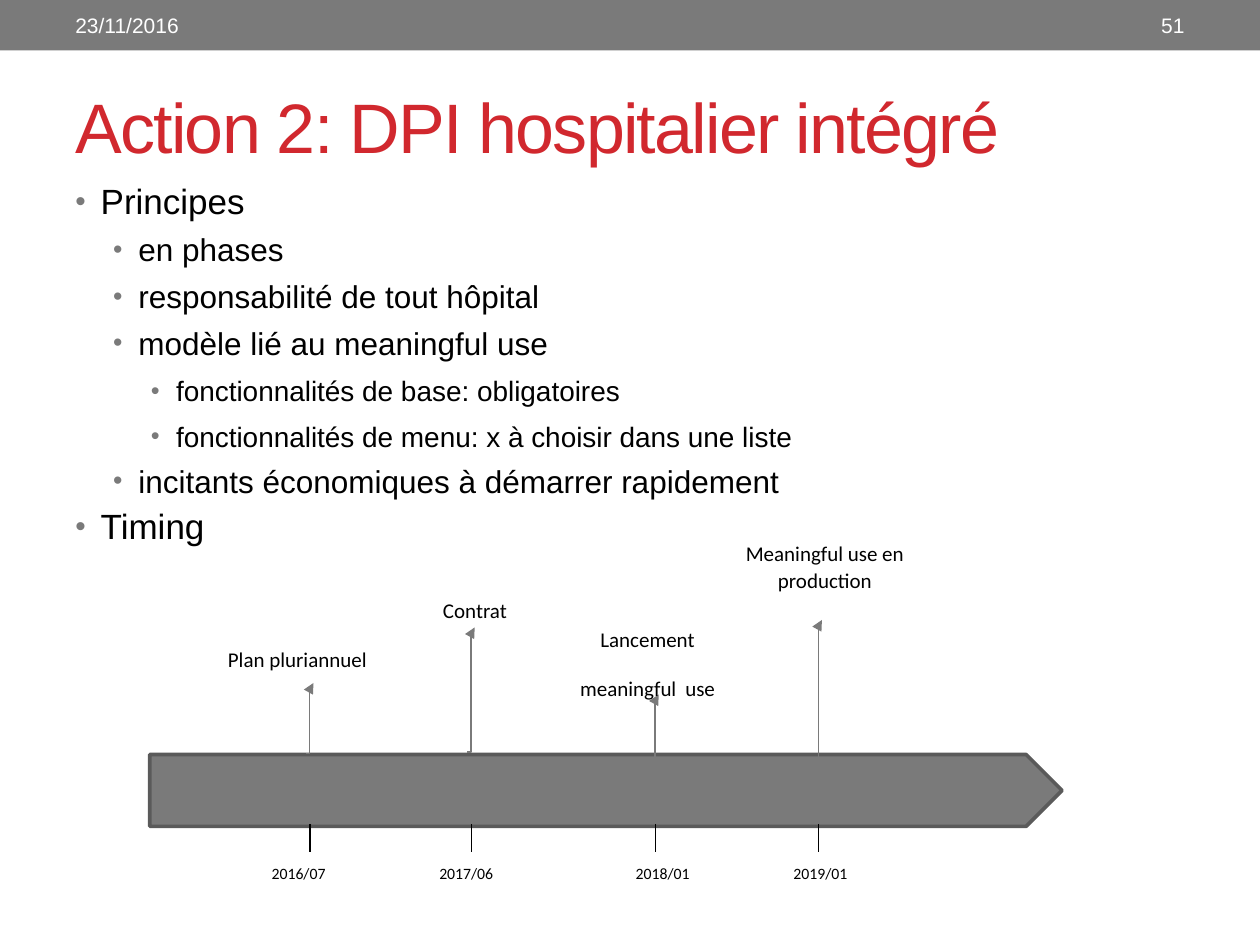
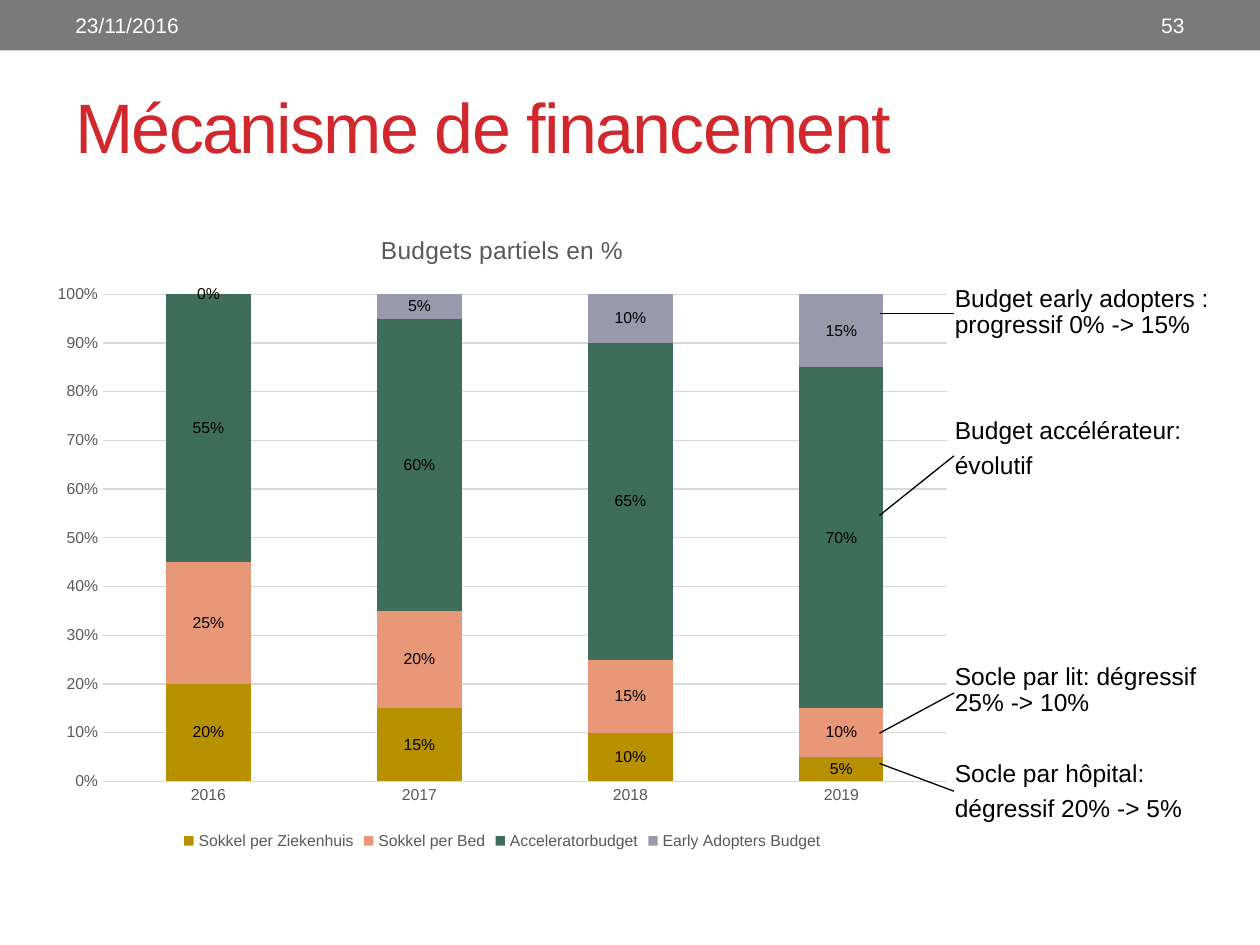
from dataclasses import dataclass

from lxml.etree import SubElement
from pptx import Presentation
from pptx.chart.data import CategoryChartData
from pptx.dml.color import RGBColor
from pptx.enum.chart import XL_CHART_TYPE, XL_LEGEND_POSITION, XL_TICK_MARK
from pptx.enum.shapes import MSO_CONNECTOR, MSO_SHAPE
from pptx.enum.text import MSO_ANCHOR, PP_ALIGN
from pptx.oxml.ns import qn
from pptx.util import Cm, Pt


@dataclass(frozen=True)
class Theme:
    font: str = "Arial"
    label_font: str = "Calibri"
    red: str = "D1282E"
    grey: str = "7A7A7A"
    dark_grey: str = "5A5A5A"
    chart_text: str = "595959"
    grid: str = "D9D9D9"
    black: str = "000000"
    white: str = "FFFFFF"
    title: int = 40
    header: int = 12
    body: tuple = (20, 18, 16)
    callout: int = 14
    label: int = 12
    small: int = 9
    thin: float = 0.75
    thick: float = 2.08


T = Theme()

PRINCIPLES = [
    (0, "Principes"),
    (1, "en phases"),
    (1, "responsabilité de tout hôpital"),
    (1, "modèle lié au meaningful use"),
    (2, "fonctionnalités de base: obligatoires"),
    (2, "fonctionnalités de menu: x à choisir dans une liste"),
    (1, "incitants économiques à démarrer rapidement"),
    (0, "Timing"),
]

LAUNCH = ["Lancement", [("meaningful", {}), (" ", {"size": 18, "font": T.font}), ("use", {})]]

# x, arrow foot, arrow head, date centre, date, label box, label lines, label wraps
MILESTONES = [
    (6.25, 15.19, 13.77, 6.02, "2016/07", (4.09, 12.9, 3.81, 0.89), ["Plan pluriannuel"], False),
    (9.5, 15.16, 12.65, 9.4, "2017/06", (7.39, 11.91, 4.37, 1.52), ["Contrat"], True),
    (13.21, 15.29, 14, 13.36, "2018/01", (10.87, 12.5, 4.37, 1.78), LAUNCH, True),
    (16.5, 15.39, 12.5, 16.54, "2019/01", (14.33, 10.77, 4.6, 1.5),
     ["Meaningful use en production"], True),
]

YEARS = ["2016", "2017", "2018", "2019"]
BUDGETS = [
    ("Sokkel per Ziekenhuis", "B89101", (0.2, 0.15, 0.1, 0.05)),
    ("Sokkel per Bed", "E89878", (0.25, 0.2, 0.15, 0.1)),
    ("Acceleratorbudget", "3E6E5A", (0.55, 0.6, 0.65, 0.7)),
    ("Early Adopters Budget", "989AAC", (0, 0.05, 0.1, 0.15)),
]

CALLOUTS = [
    (5.77, ["Budget early adopters : progressif 0% -> 15%"], 6.32, 6.32),
    (8.43, ["Budget accélérateur:", "évolutif"], 10.39, 9.19),
    (13.39, ["Socle par lit: dégressif 25% -> 10%"], 14.78, 13.97),
    (15.35, ["Socle par hôpital:", "dégressif 20% -> 5%"], 15.39, 15.95),
]


def rgb(color):
    return RGBColor.from_string(color)


def set_font(f, size, color, font=T.font):
    f.size, f.name, f.bold = Pt(size), font, False
    f.color.rgb = rgb(color)


def add_run(p, text, *, size, color, font, tracking):
    r = p.add_run()
    r.text = text
    set_font(r.font, size, color, font)
    if tracking:
        r.font._element.set("spc", str(tracking))


def add_text(s, box, lines, *, size, color=T.black, font=T.font, tracking=0,
             align=PP_ALIGN.LEFT, anchor=MSO_ANCHOR.TOP, spacing=None, after=None,
             inset=(0.25, 0.13), wrap=True):
    tf = s.shapes.add_textbox(*map(Cm, box)).text_frame
    tf.word_wrap, tf.vertical_anchor = wrap, anchor
    tf.margin_left = tf.margin_right = Cm(inset[0])
    tf.margin_top = tf.margin_bottom = Cm(inset[1])
    for i, line in enumerate(lines):
        p = tf.add_paragraph() if i else tf.paragraphs[0]
        p.alignment, p.line_spacing = align, spacing
        if after is not None:
            p.space_after = Pt(after)
        for text, changes in [(line, {})] if isinstance(line, str) else line:
            look = {"size": size, "color": color, "font": font, "tracking": tracking}
            add_run(p, text, **(look | changes))
    return tf


def add_bullets(s, box, items):
    lines = [[(text, {"size": T.body[level]})] for level, text in items]
    tf = add_text(s, box, lines, size=T.body[0], spacing=Pt(23))
    for p, (level, _) in zip(tf.paragraphs, items):
        p.level = level
        p.space_before = Pt(T.body[level] * 0.2)
        pPr = p._p.get_or_add_pPr()
        pPr.set("marL", str(Cm(0.51 + 0.76 * level)))
        pPr.set("indent", str(-Cm(0.51)))
        SubElement(SubElement(pPr, qn("a:buClr")), qn("a:srgbClr")).set("val", T.grey)
        SubElement(pPr, qn("a:buSzPct")).set("val", "90000" if level == 2 else "85000")
        SubElement(pPr, qn("a:buFont")).set("typeface", T.font)
        SubElement(pPr, qn("a:buChar")).set("char", "•")


def add_block(s, kind, box, fill, line=None):
    sp = s.shapes.add_shape(kind, *map(Cm, box))
    sp.shadow.inherit = False
    sp.fill.solid()
    sp.fill.fore_color.rgb = rgb(fill)
    if line:
        sp.line.color.rgb = rgb(line)
        sp.line.width = Pt(T.thick)
    else:
        sp.line.fill.background()


def add_line(s, start, end, color=T.black, kind=MSO_CONNECTOR.STRAIGHT, arrow=False):
    cxn = s.shapes.add_connector(kind, *map(Cm, start + end))
    cxn.line.color.rgb = rgb(color)
    cxn.line.width = Pt(T.thin)
    if arrow:
        SubElement(cxn.line._get_or_add_ln(), qn("a:tailEnd")).set("type", "triangle")
    SubElement(cxn._element.spPr, qn("a:effectLst"))


def add_base(prs, title, number):
    s = prs.slides.add_slide(prs.slide_layouts[6])
    add_block(s, MSO_SHAPE.RECTANGLE, (0, 0, 25.4, 1.02), T.grey)
    add_text(s, (1.27, 1.17, 22.86, 2.74), [title], size=T.title, color=T.red,
             tracking=-100, anchor=MSO_ANCHOR.MIDDLE)
    header = {"size": T.header, "color": T.white, "anchor": MSO_ANCHOR.MIDDLE}
    add_text(s, (1.27, 0.05, 8.05, 0.91), ["23/11/2016"], **header)
    add_text(s, (21.16, 0.05, 2.97, 0.91), [number], align=PP_ALIGN.RIGHT, **header)
    return s


def add_timeline(s):
    add_block(s, MSO_SHAPE.PENTAGON, (3.02, 15.21, 18.39, 1.45), T.grey, T.dark_grey)
    style = {"font": T.label_font, "align": PP_ALIGN.CENTER, "spacing": 1.07,
             "after": 6, "inset": (0.18, 0.1)}
    for x, foot, head, centre, date, box, lines, wrap in MILESTONES:
        add_line(s, (x - 0.08, foot), (x + 0.07, head), T.grey, MSO_CONNECTOR.ELBOW, True)
        add_line(s, (x, 16.61), (x, 17.17))
        add_text(s, (centre - 1.12, 17.28, 2.24, 0.89), [date], size=T.small, wrap=False, **style)
        add_text(s, box, lines, size=T.label, wrap=wrap, **style)


def style_axis(axis):
    axis.major_tick_mark = axis.minor_tick_mark = XL_TICK_MARK.NONE
    set_font(axis.tick_labels.font, T.small, T.chart_text)


def add_budget_chart(s, box):
    data = CategoryChartData(number_format="0%")
    data.categories = YEARS
    for name, _, values in BUDGETS:
        data.add_series(name, values)
    chart = s.shapes.add_chart(XL_CHART_TYPE.COLUMN_STACKED, *map(Cm, box), data).chart
    set_font(chart.font, 10, T.black)

    chart.has_title = True
    p = chart.chart_title.text_frame.paragraphs[0]
    add_run(p, "Budgets partiels en %", size=T.callout, color=T.chart_text,
            font=T.font, tracking=0)
    p.runs[0].font.bold = False

    chart.has_legend = True
    chart.legend.position = XL_LEGEND_POSITION.BOTTOM
    chart.legend.include_in_layout = False
    set_font(chart.legend.font, T.small, T.chart_text)

    years, shares = chart.category_axis, chart.value_axis
    style_axis(years)
    style_axis(shares)
    shares.minimum_scale, shares.maximum_scale, shares.major_unit = 0, 1, 0.1
    shares.tick_labels.number_format = "0%"
    shares.tick_labels.number_format_is_linked = False
    shares.format.line.fill.background()
    for line in (years.format.line, shares.major_gridlines.format.line):
        line.color.rgb = rgb(T.grid)
        line.width = Pt(T.thin)

    plot = chart.plots[0]
    plot.gap_width, plot.overlap, plot.vary_by_categories = 150, 100, False
    for series, (_, color, _) in zip(plot.series, BUDGETS):
        series.format.fill.solid()
        series.format.fill.fore_color.rgb = rgb(color)
        labels = series.data_labels
        labels.show_value = True
        labels.number_format, labels.number_format_is_linked = "0%", False
        set_font(labels.font, T.small, T.black)


def add_callouts(s):
    for top, lines, y_bar, y_text in CALLOUTS:
        add_text(s, (19.25, top, 5.72, 1.3), lines, size=T.callout,
                 spacing=0.9, after=5, inset=(0, 0))
        add_line(s, (17.73, y_bar), (19.23, y_text))


def main():
    prs = Presentation()
    prs.slide_width, prs.slide_height = Cm(25.4), Cm(19.05)

    s = add_base(prs, "Action 2: DPI hospitalier intégré", "51")
    add_bullets(s, (1.27, 3.53, 22.86, 13.77), PRINCIPLES)
    add_timeline(s)

    s = add_base(prs, "Mécanisme de financement", "53")
    add_budget_chart(s, (0.79, 4.24, 18.67, 13))
    add_callouts(s)

    prs.save("out.pptx")


if __name__ == "__main__":
    main()
